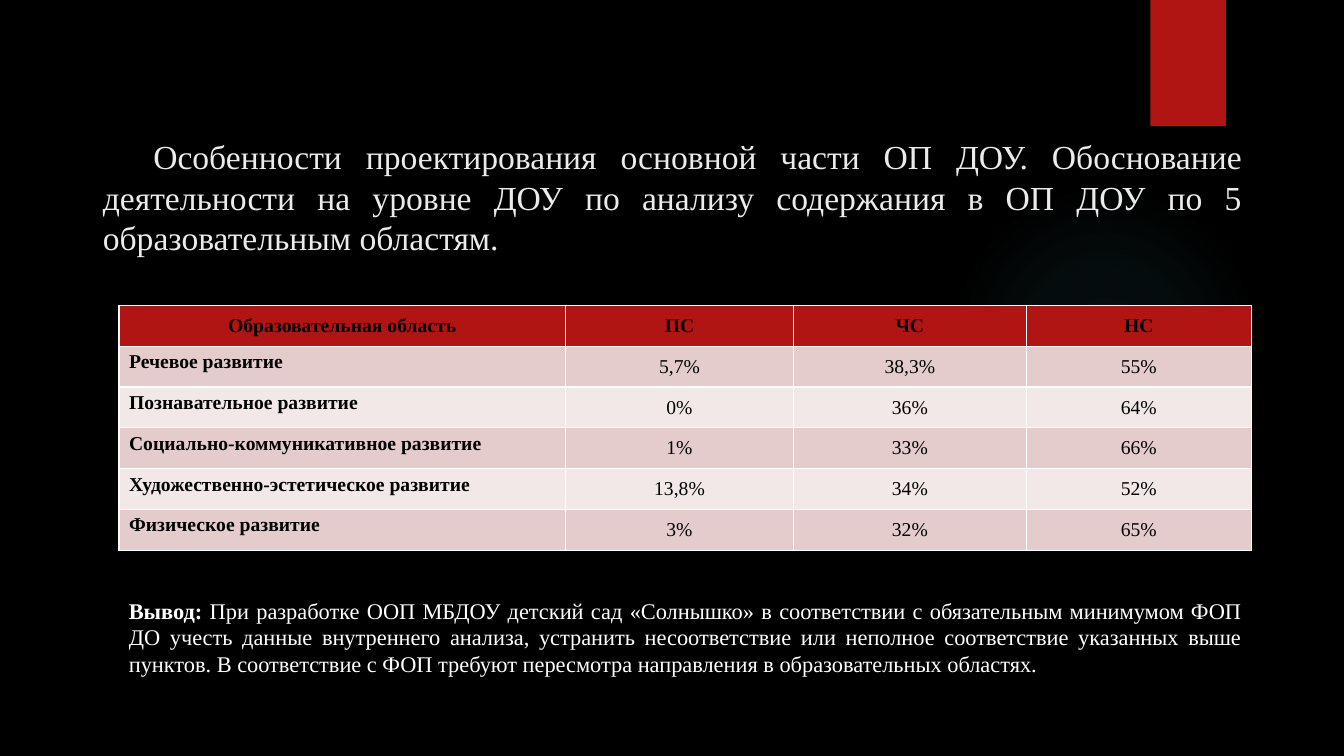
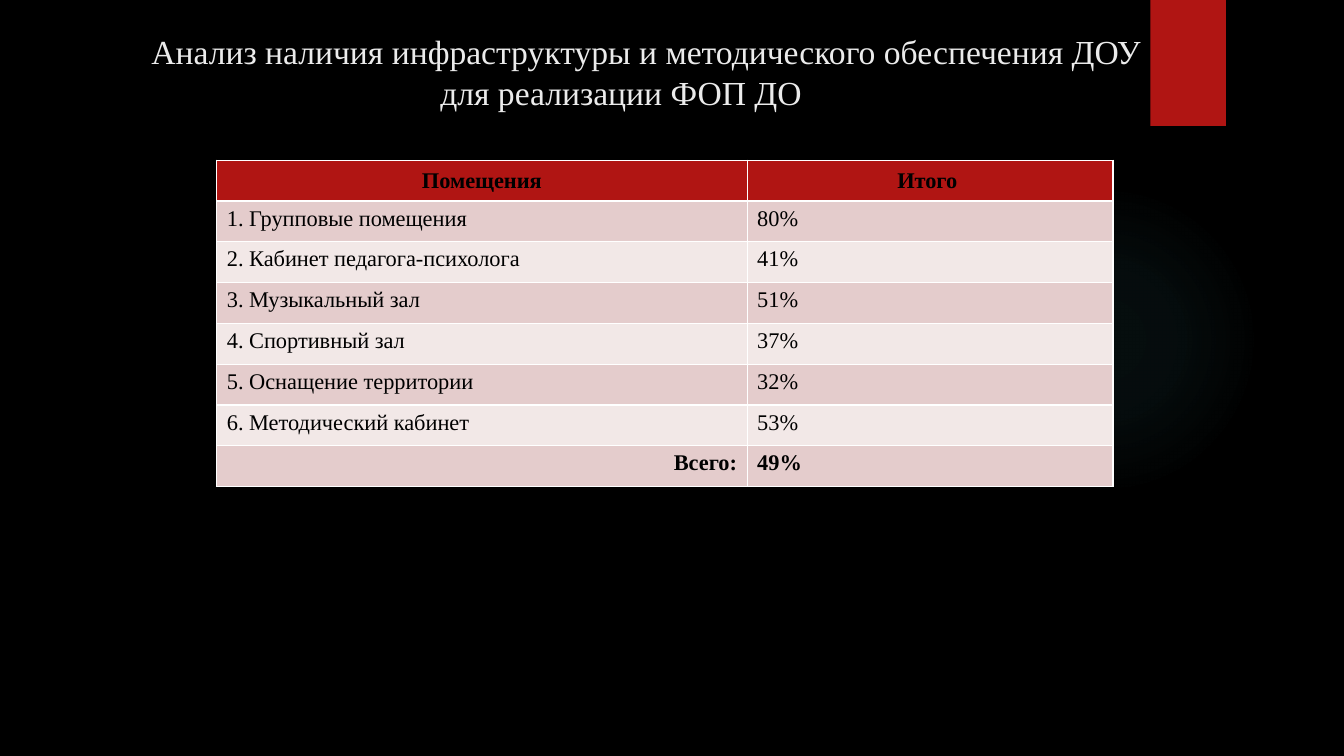
from pptx import Presentation
from pptx.dml.color import RGBColor
from pptx.enum.shapes import MSO_SHAPE
from pptx.enum.text import MSO_ANCHOR, MSO_AUTO_SIZE, PP_ALIGN
from pptx.oxml import parse_xml
from pptx.oxml.ns import nsdecls
from pptx.util import Inches, Pt

BLACK = RGBColor(0x00, 0x00, 0x00)
WHITE = RGBColor(0xFF, 0xFF, 0xFF)
TITLE_GREY = RGBColor(0xEB, 0xEB, 0xEB)
RED = RGBColor(0xB0, 0x15, 0x13)
GLOW_TEAL = RGBColor(0x50, 0xB9, 0xC1)
ROW_COLORS = (RGBColor(0xE4, 0xCC, 0xCC), RGBColor(0xF2, 0xE8, 0xE7))
FONT = "Times New Roman"


def add_titled_slide(title_text, left, top, width, alignment):
    slide = prs.slides.add_slide(title_layout)
    title = slide.shapes.title
    title.left, title.top = Inches(left), Inches(top)
    title.width, title.height = Inches(width), Inches(1.45)
    frame = title.text_frame
    frame.text = "\t" + title_text
    frame.word_wrap = True
    frame.auto_size = MSO_AUTO_SIZE.NONE
    frame.vertical_anchor = MSO_ANCHOR.TOP
    heading = frame.paragraphs[0]
    heading.alignment = alignment
    heading._p.get_or_add_pPr().append(parse_xml(
        f'<a:tabLst {nsdecls("a")}><a:tab pos="{Inches(0.5)}" algn="l"/></a:tabLst>'))
    heading.font.name = FONT
    heading.font.size = Pt(24)
    heading.font.color.rgb = TITLE_GREY
    return slide


def add_banded_table(slide, rows, left, top, col_widths, height, size):
    """Add a table with a red header; white rules come from the default table style."""
    table = slide.shapes.add_table(
        len(rows), len(col_widths), Inches(left), Inches(top),
        Inches(sum(col_widths)), Inches(height)).table
    for column, width in zip(table.columns, col_widths):
        column.width = Inches(width)
    for r, row in enumerate(rows):
        for c, value in enumerate(row):
            cell = table.cell(r, c)
            cell.text = value
            cell.fill.solid()
            cell.fill.fore_color.rgb = ROW_COLORS[(r - 1) % 2] if r else RED
            paragraph = cell.text_frame.paragraphs[0]
            paragraph.font.name = FONT
            paragraph.font.size = Pt(size)
            paragraph.font.color.rgb = BLACK
            paragraph.font.bold = r == 0
            if r == 0:
                cell.vertical_anchor = MSO_ANCHOR.MIDDLE
                paragraph.alignment = PP_ALIGN.CENTER
    return table


prs = Presentation()
prs.slide_width, prs.slide_height = Inches(13.33), Inches(7.5)
title_layout = prs.slide_layouts[5]
background = prs.slide_master.background.fill
background.solid()
background.fore_color.rgb = BLACK

# Slide 1: educational areas
areas_slide = add_titled_slide(
    "Особенности проектирования основной части ОП ДОУ. Обоснование деятельности "
    "на уровне ДОУ по анализу содержания в ОП ДОУ по 5 образовательным областям.",
    0.92, 1.3, 11.5, PP_ALIGN.JUSTIFY)

# Glow and bookmark are moved to the layout, so every slide shows them
glow = areas_slide.shapes.add_shape(
    MSO_SHAPE.OVAL, Inches(9.41), Inches(1.83), Inches(3.08), Inches(3.08))
bookmark = areas_slide.shapes.add_shape(
    MSO_SHAPE.RECTANGLE, Inches(11.41), 0, Inches(0.75), Inches(1.25))
for decoration, color in ((glow, GLOW_TEAL), (bookmark, RED)):
    decoration.shadow.inherit = False
    decoration.line.fill.background()
    decoration.fill.solid()
    decoration.fill.fore_color.rgb = color
    title_layout.shapes.element.append(decoration._element)

glow_stops = "".join(
    f'<a:gs pos="{position * 1000}"><a:srgbClr val="{GLOW_TEAL}">'
    f'<a:alpha val="{opacity * 1000}"/></a:srgbClr></a:gs>'
    for position, opacity in ((0, 7), (36, 6), (69, 0)))
glow_gradient = parse_xml(
    f'<a:gradFill {nsdecls("a")}><a:gsLst>{glow_stops}</a:gsLst><a:path path="circle">'
    '<a:fillToRect l="50000" t="50000" r="50000" b="50000"/></a:path></a:gradFill>')
glow_properties = glow._element.spPr
glow_properties.replace(glow_properties.solidFill, glow_gradient)

areas = [
    ("Образовательная область", "ПС", "ЧС", "НС"),
    ("Речевое развитие", "5,7%", "38,3%", "55%"),
    ("Познавательное развитие", "0%", "36%", "64%"),
    ("Социально-коммуникативное развитие", "1%", "33%", "66%"),
    ("Художественно-эстетическое развитие", "13,8%", "34%", "52%"),
    ("Физическое развитие", "3%", "32%", "65%"),
]
areas_table = add_banded_table(
    areas_slide, areas, 1.18, 3.03, (4.43, 2.26, 2.31, 2.23), 2.43, 14)
for r in range(1, len(areas)):
    areas_table.cell(r, 0).text_frame.paragraphs[0].font.bold = True
    for c in range(1, len(areas[0])):
        share = areas_table.cell(r, c)
        share.vertical_anchor = MSO_ANCHOR.MIDDLE
        share.text_frame.paragraphs[0].alignment = PP_ALIGN.CENTER

conclusion_frame = areas_slide.shapes.add_textbox(
    Inches(1.18), Inches(5.87), Inches(11.24), Inches(0.91)).text_frame
conclusion_frame.word_wrap = True
conclusion = conclusion_frame.paragraphs[0]
conclusion.alignment = PP_ALIGN.JUSTIFY
conclusion.font.name = FONT
conclusion.font.size = Pt(16)
conclusion.font.color.rgb = WHITE
lead = conclusion.add_run()
lead.text = "Вывод:"
lead.font.bold = True
conclusion.add_run().text = (
    " При разработке ООП МБДОУ детский сад «Солнышко» в соответствии с обязательным "
    "минимумом ФОП ДО учесть данные внутреннего анализа, устранить несоответствие или "
    "неполное соответствие указанных выше пунктов. В соответствие с ФОП требуют "
    "пересмотра направления в образовательных областях.")

# Slide 2: premises
premises_slide = add_titled_slide(
    "Анализ наличия инфраструктуры и методического обеспечения ДОУ "
    "для реализации ФОП ДО", 0.88, 0.26, 10.56, PP_ALIGN.CENTER)
premises = [
    ("Помещения", "Итого "),
    ("1. Групповые помещения", "80%"),
    ("2. Кабинет педагога-психолога", "41%"),
    ("3. Музыкальный зал", "51%"),
    ("4. Спортивный зал", "37%"),
    ("5. Оснащение территории", "32%"),
    ("6. Методический кабинет", "53%"),
    ("Всего:", "49%"),
]
premises_table = add_banded_table(
    premises_slide, premises, 2.15, 1.59, (5.26, 3.63), 3.24, 16)
total_row = len(premises) - 1
for c in range(2):
    premises_table.cell(total_row, c).text_frame.paragraphs[0].font.bold = True
premises_table.cell(total_row, 0).text_frame.paragraphs[0].alignment = PP_ALIGN.RIGHT

prs.save("out.pptx")
